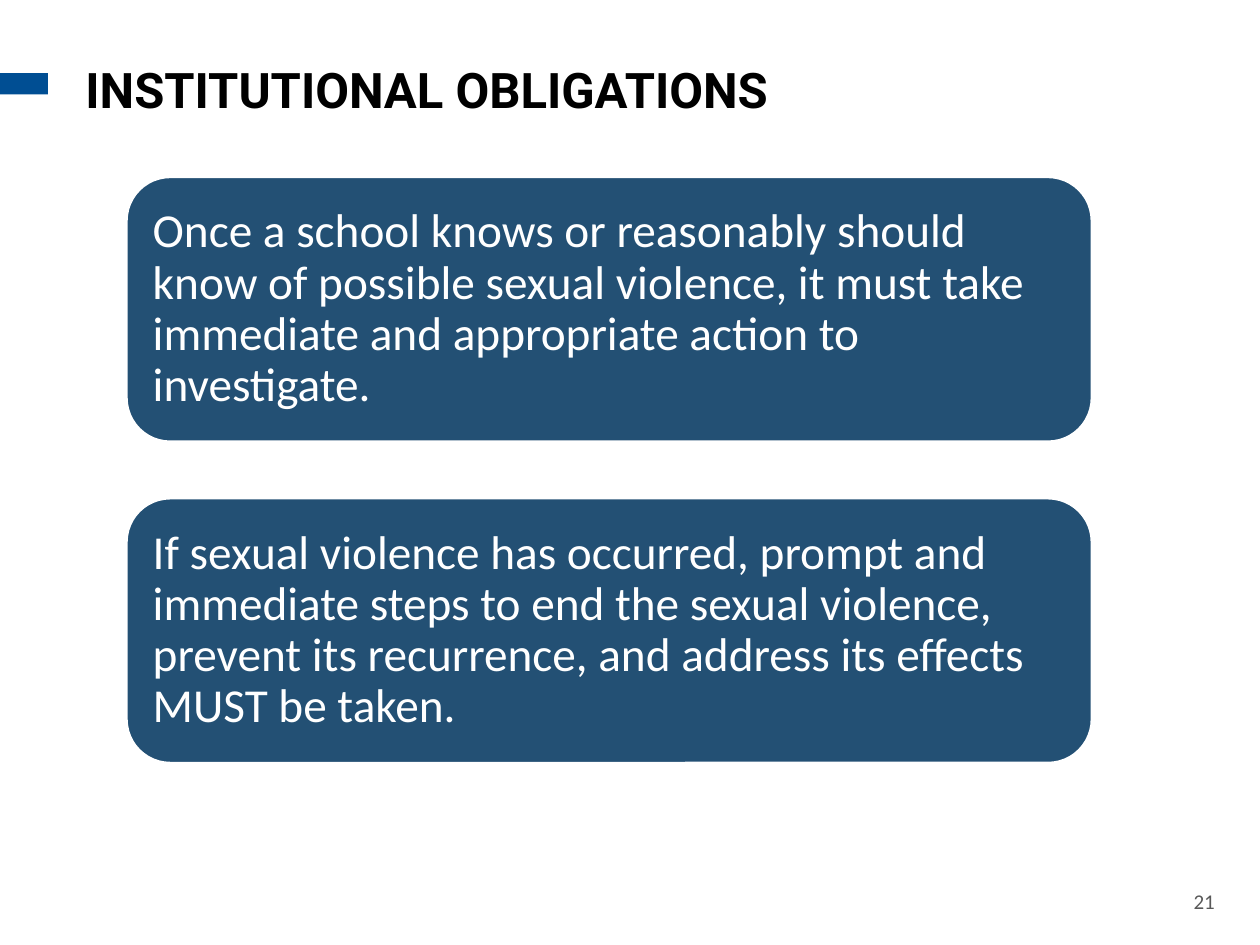
from dataclasses import dataclass

from pptx import Presentation
from pptx.dml.color import RGBColor
from pptx.enum.shapes import MSO_SHAPE
from pptx.enum.text import MSO_ANCHOR, PP_ALIGN
from pptx.shapes.autoshape import Shape
from pptx.slide import Slide
from pptx.util import Inches, Pt

HUES = {"bar": "004E93", "card": "235074", "white": "FFFFFF", "black": "000000", "gray": "595959"}
FONTS = {
    "title": {"name": "Roboto", "size": Pt(28), "bold": True},
    "card": {"name": "Calibri", "size": Pt(27)},
    "page": {"name": "Calibri", "size": Pt(12)},
}
CARDS = (
    "Once a school knows or reasonably should know of possible sexual violence, "
    "it must take immediate and appropriate action to investigate.",
    "If sexual violence has occurred, prompt and immediate steps to end the sexual violence, "
    "prevent its recurrence, and address its effects MUST be taken.",
)
TOP, STEP, INSET = 1.4, 2.55, 0.11


@dataclass
class Box:
    left: float
    top: float
    width: float
    height: float

    def place(self) -> list[int]:
        return [Inches(v) for v in (self.left, self.top, self.width, self.height)]


def color(key: str) -> RGBColor:
    return RGBColor.from_string(HUES[key])


def write(shape: Shape, text: str, style: str, hue: str, align: PP_ALIGN = PP_ALIGN.LEFT) -> None:
    frame = shape.text_frame
    frame.word_wrap = True
    frame.text = text
    para = frame.paragraphs[0]
    para.alignment = align
    font = para.runs[0].font
    for key, value in FONTS[style].items():
        setattr(font, key, value)
    font.color.rgb = color(hue)


def block(slide: Slide, kind: MSO_SHAPE, box: Box, hue: str) -> Shape:
    shape = slide.shapes.add_shape(kind, *box.place())
    shape.shadow.inherit = False
    shape.fill.solid()
    shape.fill.fore_color.rgb = color(hue)
    shape.line.fill.background()
    return shape


def card(slide: Slide, box: Box, text: str) -> None:
    shape = block(slide, MSO_SHAPE.ROUNDED_RECTANGLE, box, "card")
    shape.line.color.rgb = color("white")
    shape.line.width = Pt(2)
    write(shape, text, "card", "white")
    frame = shape.text_frame
    frame.vertical_anchor = MSO_ANCHOR.MIDDLE
    for side in ("left", "top", "right", "bottom"):
        setattr(frame, f"margin_{side}", Inches(INSET))
    frame.paragraphs[0].line_spacing = 0.9


def main() -> None:
    deck = Presentation()
    deck.slide_width, deck.slide_height = Inches(10), Inches(7.5)
    slide = deck.slides.add_slide(deck.slide_layouts[6])
    block(slide, MSO_SHAPE.RECTANGLE, Box(-0.01, 0.58, 0.39, 0.17), "bar")
    page = slide.shapes.add_textbox(*Box(9.26, 7, 0.48, 0.3).place())
    write(page, "21", "page", "gray", PP_ALIGN.RIGHT)
    for i, text in enumerate(CARDS):
        card(slide, Box(1, TOP + i * STEP, 7.67, 2.11), text)
    title = slide.shapes.add_textbox(*Box(0.58, 0.42, 6.75, 0.92).place())
    write(title, "INSTITUTIONAL OBLIGATIONS", "title", "black")
    deck.save("out.pptx")


if __name__ == "__main__":
    main()
